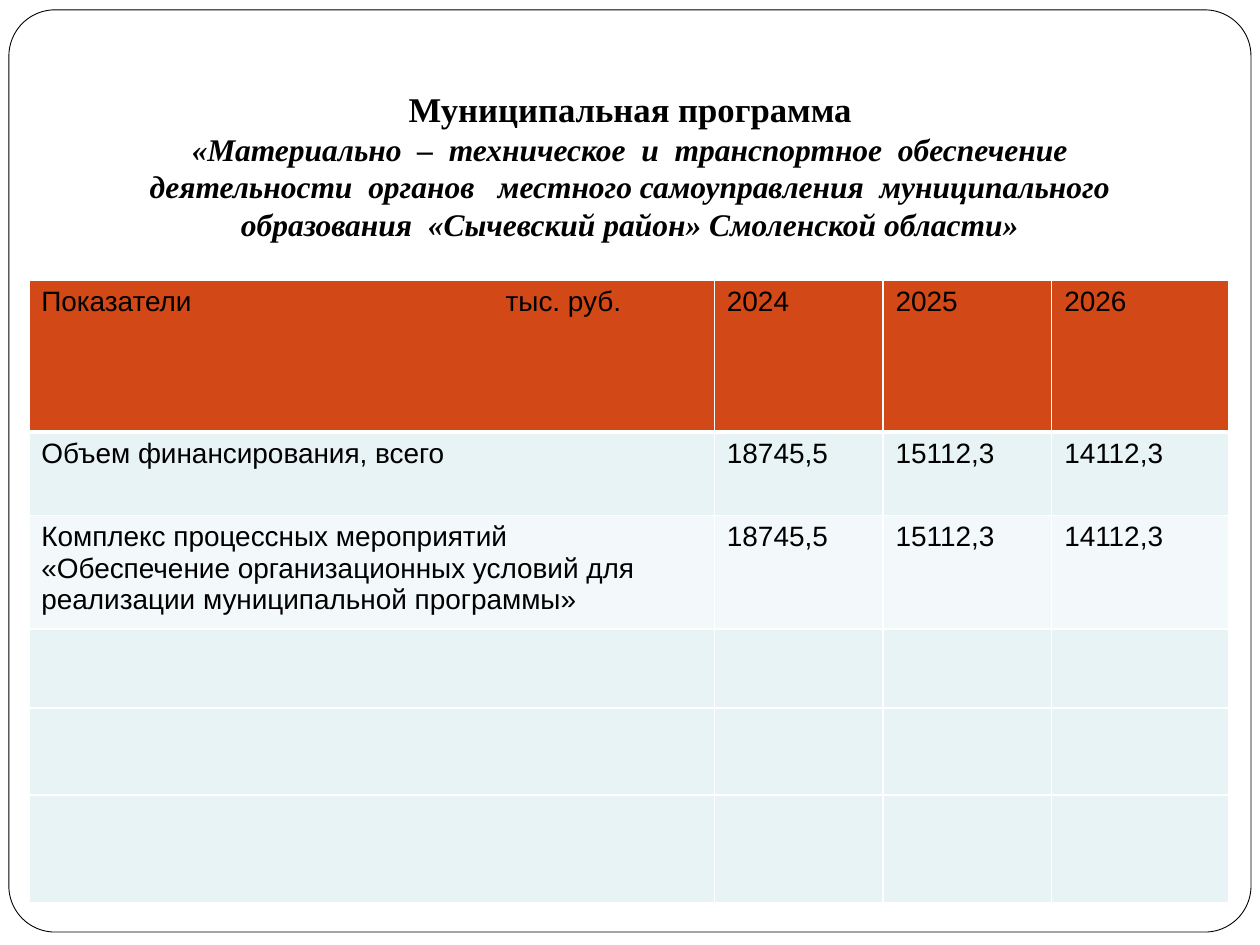
import dataclasses
import typing

import pptx
import pptx.dml.color
import pptx.enum.shapes
import pptx.enum.text
import pptx.oxml
import pptx.oxml.ns
import pptx.util

Cm = pptx.util.Cm
Pt = pptx.util.Pt
Rgb = pptx.dml.color.RGBColor.from_string


@dataclasses.dataclass(frozen=True)
class Theme:
    ink: str = "000000"
    paper: str = "FFFFFF"
    head: str = "D34817"
    band: str = "E7F3F4"
    pale: str = "F3F9FA"
    serif: str = "Times New Roman"
    sans: str = "Arial"
    title: float = 19.8
    sub: float = 18
    body: float = 16


@dataclasses.dataclass(frozen=True)
class Line:
    text: str
    size: float
    slant: bool = False


@dataclasses.dataclass(frozen=True)
class Row:
    high: float
    fill: str
    cells: tuple[str, ...] = ("", "", "", "")
    top: float = 1
    base: float = 1


THEME = Theme()

LINES = (
    Line("Муниципальная программа", THEME.title),
    Line("«Материально  –  техническое  и  транспортное  обеспечение", THEME.sub, True),
    Line("деятельности  органов   местного самоуправления  муниципального", THEME.sub, True),
    Line("образования  «Сычевский район» Смоленской области»", THEME.sub, True),
)

SUMS = ("18745,5", "15112,3", "14112,3")
WIDTHS = (13.82, 3.4, 3.4, 3.58)
ROWS = (
    Row(3.07, THEME.head, ("Показатели\tтыс. руб.", "2024", "2025", "2026"), base=3),
    Row(1.68, THEME.band, ("Объем финансирования, всего", *SUMS), top=3),
    Row(2.14, THEME.pale, (
        "Комплекс процессных мероприятий «Обеспечение организационных "
        "условий для реализации муниципальной программы»", *SUMS)),
    Row(1.6, THEME.band),
    Row(1.75, THEME.band),
    Row(2.18, THEME.band),
)
UNIT_TAB = 9.36


def style(font: typing.Any, face: str, size: float) -> None:
    font.name = face
    font.size = Pt(size)
    font.color.rgb = Rgb(THEME.ink)


def draw_frame(slide: typing.Any) -> None:
    frame = slide.shapes.add_shape(
        pptx.enum.shapes.MSO_SHAPE.ROUNDED_RECTANGLE,
        Cm(0.18), Cm(0.2), Cm(25.04), Cm(18.59))
    frame.adjustments[0] = 0.05
    frame.shadow.inherit = False
    frame.fill.solid()
    frame.fill.fore_color.rgb = Rgb(THEME.paper)
    frame.line.color.rgb = Rgb(THEME.ink)
    frame.line.width = Pt(0.5)


def draw_title(slide: typing.Any, lines: tuple[Line, ...]) -> None:
    box = slide.shapes.add_textbox(Cm(1.27), Cm(0.76), Cm(22.86), Cm(4.39))
    text = box.text_frame
    text.word_wrap = True
    text.vertical_anchor = pptx.enum.text.MSO_ANCHOR.BOTTOM
    text.margin_bottom = Cm(0.25)
    text.text = "\n".join(line.text for line in lines)
    for para, line in zip(text.paragraphs, lines):
        para.alignment = pptx.enum.text.PP_ALIGN.CENTER
        font = para.runs[0].font
        style(font, THEME.serif, line.size)
        font.bold = True
        font.italic = line.slant


def add_edge(cell: typing.Any, side: str, width: float) -> None:
    space = pptx.oxml.ns.nsdecls("a")
    cell._tc.get_or_add_tcPr().append(pptx.oxml.parse_xml(
        f'<a:ln{side} {space} w="{Pt(width)}"><a:solidFill>'
        f'<a:srgbClr val="{THEME.paper}"/></a:solidFill></a:ln{side}>'))


def add_tab(para: typing.Any, place: float) -> None:
    space = pptx.oxml.ns.nsdecls("a")
    para._p.get_or_add_pPr().append(pptx.oxml.parse_xml(
        f'<a:tabLst {space}><a:tab pos="{Cm(place)}" algn="l"/></a:tabLst>'))


def fill_cell(cell: typing.Any, text: str, row: Row) -> None:
    for side, width in (("L", 1), ("R", 1), ("T", row.top), ("B", row.base)):
        add_edge(cell, side, width)
    cell.fill.solid()
    cell.fill.fore_color.rgb = Rgb(row.fill)
    if not text:
        return
    cell.text_frame.text = text
    para = cell.text_frame.paragraphs[0]
    if "\t" in text:
        add_tab(para, UNIT_TAB)
    for run in para.runs:
        style(run.font, THEME.sans, THEME.body)
        run.font.bold = False


def draw_table(slide: typing.Any, rows: tuple[Row, ...]) -> None:
    table = slide.shapes.add_table(
        len(rows), len(WIDTHS), Cm(0.58), Cm(5.64),
        Cm(sum(WIDTHS)), Cm(sum(row.high for row in rows))).table
    for col, width in zip(table.columns, WIDTHS):
        col.width = Cm(width)
    for line, row in zip(table.rows, rows):
        line.height = Cm(row.high)
        for cell, text in zip(line.cells, row.cells):
            fill_cell(cell, text, row)


def main() -> None:
    deck = pptx.Presentation()
    deck.slide_width, deck.slide_height = Cm(25.4), Cm(19.05)
    slide = deck.slides.add_slide(deck.slide_layouts[6])

    # Border around the page
    draw_frame(slide)
    # Programme name
    draw_title(slide, LINES)
    # Funding by year
    draw_table(slide, ROWS)

    deck.save("out.pptx")


if __name__ == "__main__":
    main()
